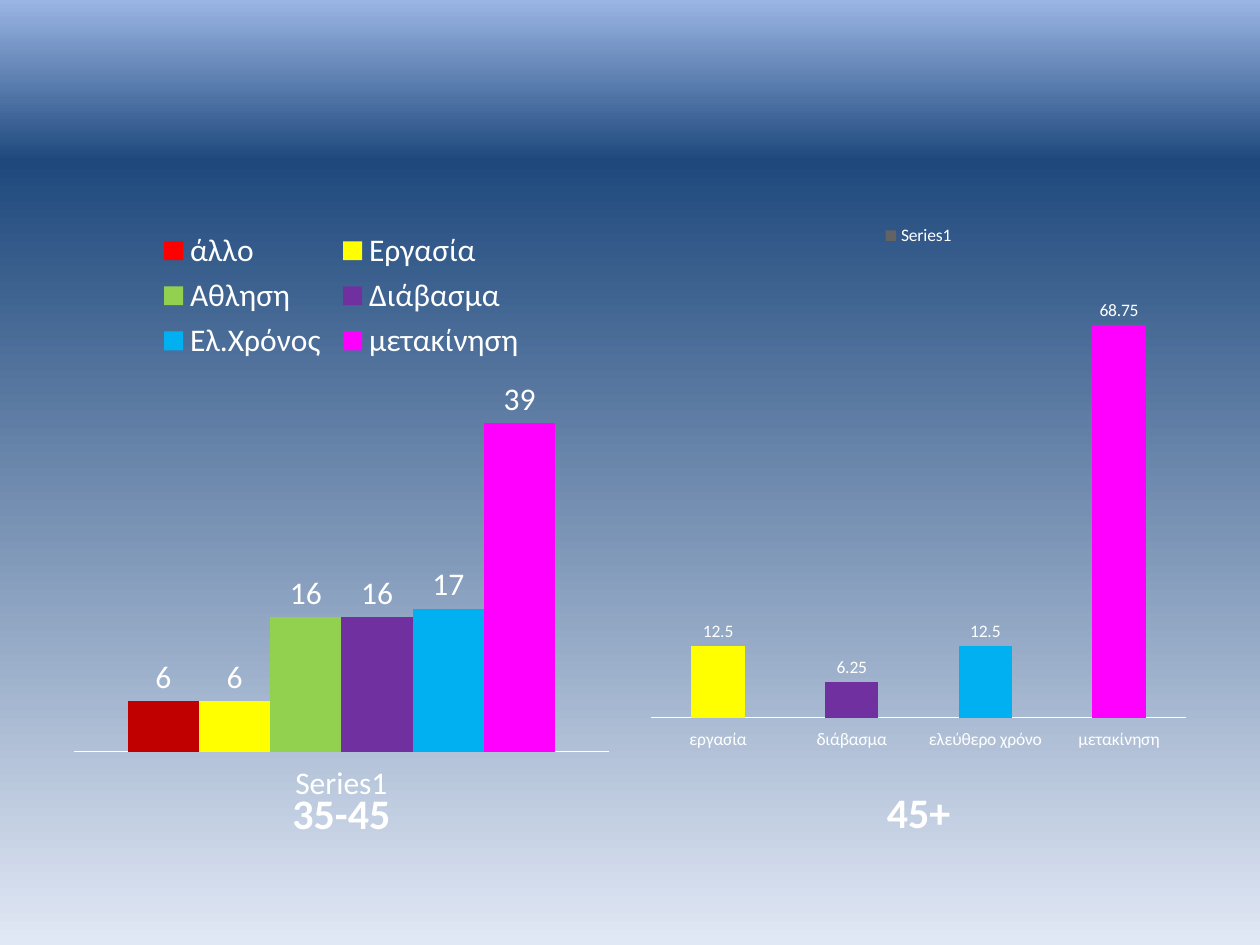
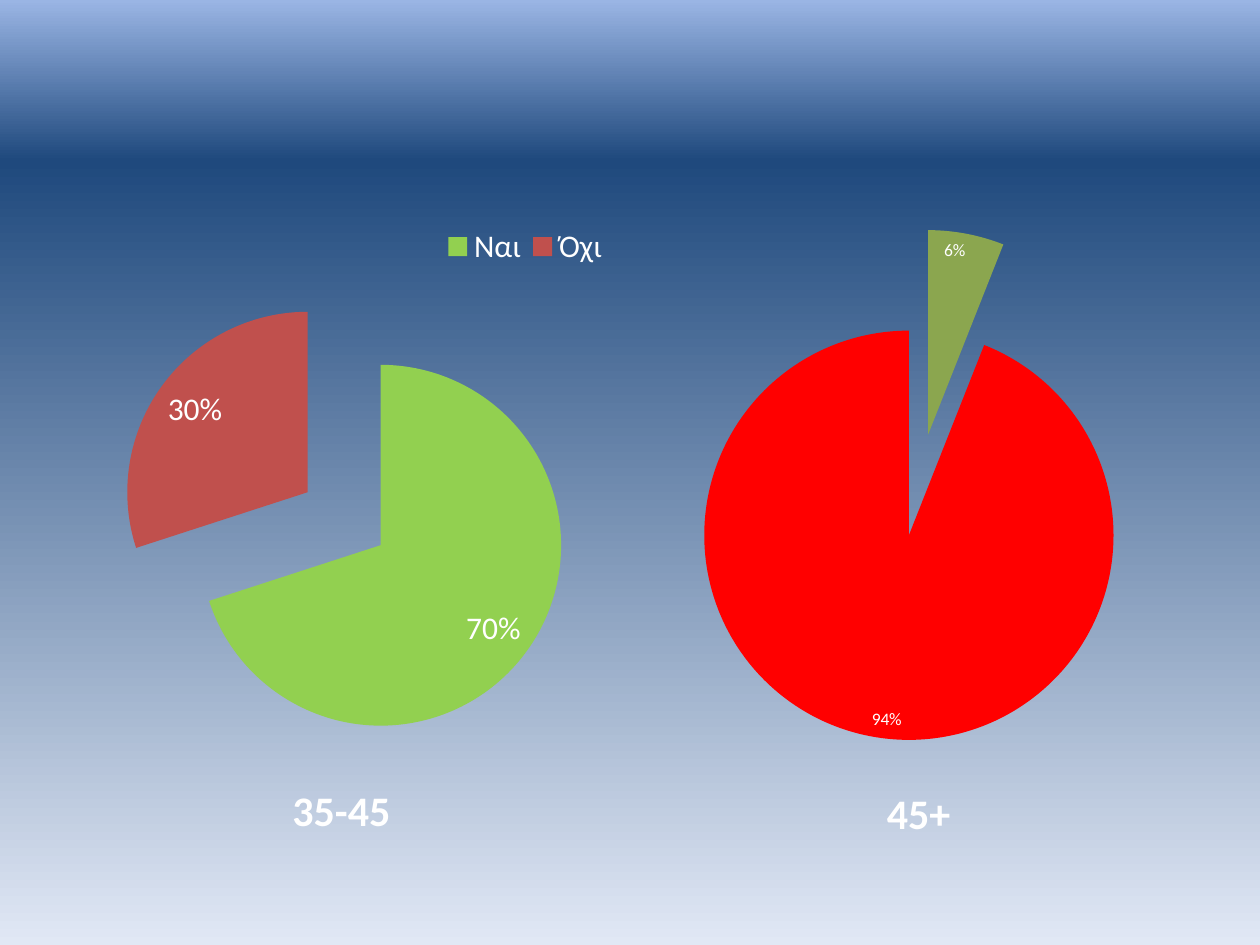
from lxml import etree
from pptx import Presentation
from pptx.chart.data import CategoryChartData
from pptx.dml.color import RGBColor
from pptx.enum.chart import XL_CHART_TYPE as KIND
from pptx.enum.chart import XL_LABEL_POSITION as SPOT
from pptx.enum.chart import XL_LEGEND_POSITION as SIDE
from pptx.enum.chart import XL_TICK_LABEL_POSITION as TICKS
from pptx.enum.chart import XL_TICK_MARK as MARK
from pptx.enum.text import MSO_ANCHOR, PP_ALIGN
from pptx.oxml.ns import qn
from pptx.util import Inches, Pt

COLORS = {
    "white": "FFFFFF", "sky": "9AB5E4", "navy": "1F497D", "mist": "E1E8F5",
    "red": "FF0000", "wine": "C00000", "yellow": "FFFF00", "lime": "92D050",
    "purple": "7030A0", "cyan": "00B0F0", "pink": "FF00FF", "gray": "636363",
    "brick": "C0504D", "olive": "8BA64F",
}
FONT = "Calibri"
GRADE = [(0, "sky"), (17, "navy"), (100, "mist")]
LEFTS, WIDTH, CAP_H = (0.5, 5.08), 4.42, 0.7

# Each slide holds a left and a right panel.
# "plot" and "key" are x, y, width, height as shares of the chart.
SLIDES = [
    [
        dict(cap="35-45", cap_y=6, kind="column", y=1.69, h=4.7, size=18, top=45,
             cats=["Series1"],
             rows=[("άλλο", [6], "red"), ("Εργασία", [6], "yellow"),
                   ("Αθληση", [16], "lime"), ("Διάβασμα", [16], "purple"),
                   ("Ελ.Χρόνος", [17], "cyan"), ("μετακίνηση", [39], "pink")],
             points=["wine"], legend=True,
             plot=(0.02, 0.27, 0.96, 0.64), key=(0.16, 0.02, 0.68, 0.24)),
        dict(cap="45+", cap_y=5.99, kind="column", y=1.68, h=4.32, size=10, top=80,
             cats=["εργασία", "διάβασμα", "ελεύθερο χρόνο", "μετακίνηση"],
             rows=[("Series1", [12.5, 6.25, 12.5, 68.75], "gray")],
             points=["yellow", "purple", "cyan", "pink"], legend=True,
             plot=(0.02, 0.09, 0.96, 0.84), key=None),
    ],
    [
        dict(cap="35-45", cap_y=5.98, kind="pie", y=1.72, h=4.32, size=18,
             cats=["Ναι", "Όχι"], rows=[("Series 1", [70, 30], None)],
             points=["lime", "brick"], legend=True,
             plot=(0.1, 0.14, 0.81, 0.83), key=(0.67, 0.02, 0.32, 0.07)),
        dict(cap="45+", cap_y=6, kind="pie", y=1.69, h=4.32, size=10,
             cats=["1", "2"], rows=[("Series 1", [6, 94], None)],
             points=["olive", "red"], legend=False,
             plot=(0.04, 0.03, 0.92, 0.94), key=None),
    ],
]


def rgb(name):
    return RGBColor.from_string(COLORS[name])


def paint(part, name):
    part.format.fill.solid()
    part.format.fill.fore_color.rgb = rgb(name)


def style(font, **form):
    for key, val in {"name": FONT, **form}.items():
        setattr(font, key, val)
    font.color.rgb = rgb("white")


def shade(master):
    """Give every slide the three-stop background."""
    fill = master.background.fill
    fill.gradient()
    fill.gradient_angle = 270
    stops = master.element.find(".//" + qn("p:bg")).find(".//" + qn("a:gsLst"))
    for old in list(stops):
        stops.remove(old)
    for pos, name in GRADE:
        stop = etree.SubElement(stops, qn("a:gs"), pos=str(pos * 1000))
        etree.SubElement(stop, qn("a:srgbClr"), val=COLORS[name])


def place(node, box, inner=False):
    """Fix a plot area or legend at a share of its chart."""
    for old in node.findall(qn("c:layout")):
        node.remove(old)
    lay = etree.Element(qn("c:layout"))
    man = etree.SubElement(lay, qn("c:manualLayout"))
    sets = [("layoutTarget", "inner")] if inner else []
    sets += [("xMode", "edge"), ("yMode", "edge")]
    sets += zip("xywh", box)
    for tag, val in sets:
        etree.SubElement(man, qn("c:" + tag), val=str(val))
    node.insert(0 if inner else 1, lay)


def set_axes(chart, top):
    axis = chart.category_axis
    axis.major_tick_mark = axis.minor_tick_mark = MARK.NONE
    axis.tick_label_position = TICKS.LOW
    axis.format.line.color.rgb = rgb("white")
    axis.format.line.width = Pt(0.75)
    scale = chart.value_axis
    form = dict(visible=False, has_major_gridlines=False,
                minimum_scale=0, maximum_scale=top)
    for key, val in form.items():
        setattr(scale, key, val)


def add_chart(slide, item, left):
    data = CategoryChartData()
    data.categories = item["cats"]
    for name, vals, _ in item["rows"]:
        data.add_series(name, vals)
    pie = item["kind"] == "pie"
    kind = KIND.PIE if pie else KIND.COLUMN_CLUSTERED
    chart = slide.shapes.add_chart(
        kind, Inches(left), Inches(item["y"]),
        Inches(WIDTH), Inches(item["h"]), data).chart
    style(chart.font, size=Pt(item["size"]))
    chart.has_title = False
    plot = chart.plots[0]
    plot.vary_by_categories = pie

    # Bars or slices
    for row, (_, _, color) in zip(plot.series, item["rows"]):
        if pie:
            burst = etree.Element(qn("c:explosion"), val="25")
            row._element.find(qn("c:tx")).addnext(burst)
        else:
            paint(row, color)
            row.invert_if_negative = False
    for n, color in enumerate(item["points"]):
        paint(plot.series[0].points[n], color)

    # Labels
    plot.has_data_labels = True
    form = dict(show_value=not pie, show_percentage=pie,
                number_format="0%" if pie else "General",
                number_format_is_linked=False,
                position=SPOT.INSIDE_END if pie else SPOT.OUTSIDE_END)
    for key, val in form.items():
        setattr(plot.data_labels, key, val)
    style(plot.data_labels.font, size=Pt(item["size"]))

    # Frame
    if not pie:
        plot.gap_width, plot.overlap = 150, 0
        set_axes(chart, item["top"])
    chart.has_legend = item["legend"]
    if item["legend"]:
        chart.legend.position = SIDE.TOP
        chart.legend.include_in_layout = False
        style(chart.legend.font, size=Pt(item["size"]))
        if item["key"]:
            place(chart.legend._element, item["key"])
    area = chart._chartSpace.find(".//" + qn("c:plotArea"))
    place(area, item["plot"], inner=True)


def add_cap(hold, item, left):
    box = dict(left=left, top=item["cap_y"], width=WIDTH, height=CAP_H)
    for key, val in box.items():
        setattr(hold, key, Inches(val))
    frame = hold.text_frame
    frame.text = item["cap"]
    frame.vertical_anchor = MSO_ANCHOR.BOTTOM
    para = frame.paragraphs[0]
    para.alignment = PP_ALIGN.CENTER
    style(para.runs[0].font, size=Pt(24), bold=True)


def main():
    deck = Presentation()
    deck.slide_width, deck.slide_height = Inches(10), Inches(7.5)
    shade(deck.slide_master)
    for pair in SLIDES:
        # Comparison layout: bodies 1 and 3 carry the captions
        slide = deck.slides.add_slide(deck.slide_layouts[4])
        holds = {p.placeholder_format.idx: p for p in slide.placeholders}
        for idx, left, item in zip((1, 3), LEFTS, pair):
            add_cap(holds.pop(idx), item, left)
            add_chart(slide, item, left)
        for hold in holds.values():
            hold._element.getparent().remove(hold._element)
    deck.save("out.pptx")


if __name__ == "__main__":
    main()
